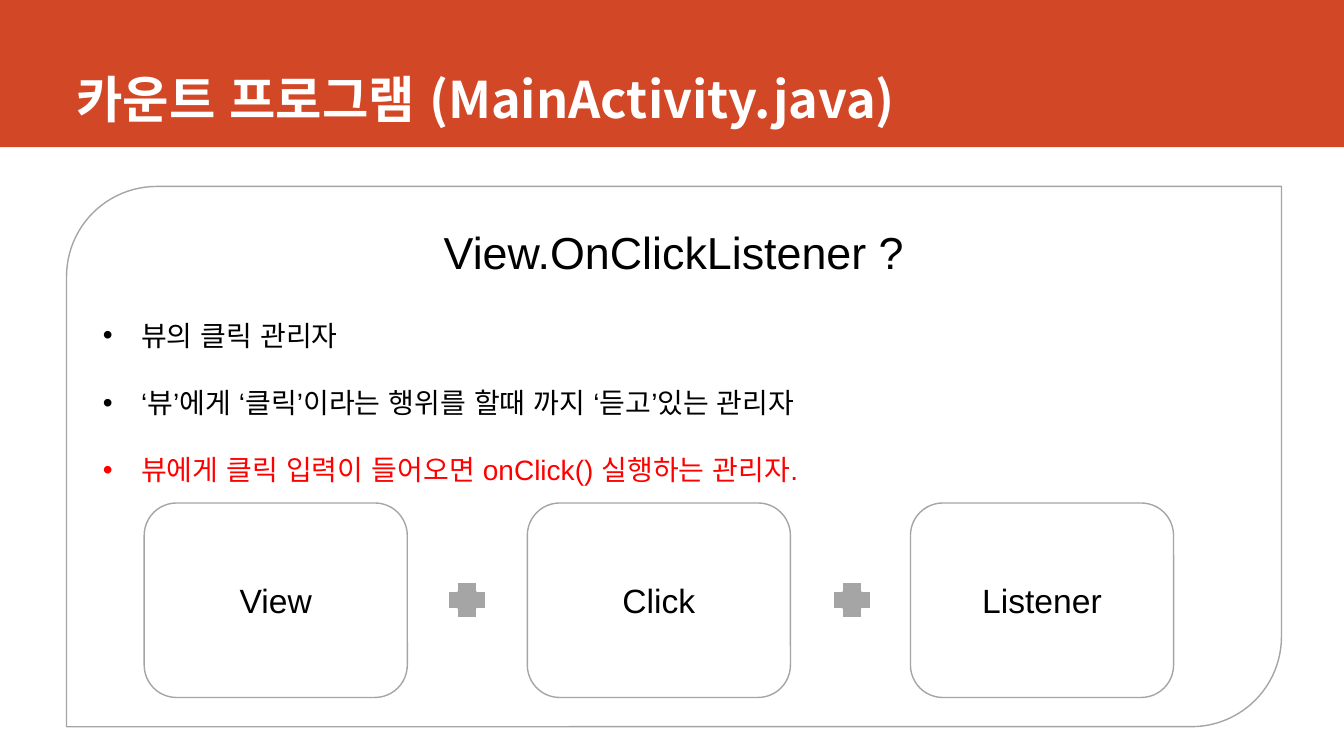
from pptx import Presentation
from pptx.dml.color import RGBColor
from pptx.enum import shapes, text
from pptx.oxml.ns import qn
from pptx.util import Inches, Pt
from lxml import etree

RED = RGBColor(0xD2, 0x47, 0x26)
GRAY = RGBColor(0xA5, 0xA5, 0xA5)
WHITE = RGBColor(0xFF, 0xFF, 0xFF)
BLACK = RGBColor(0, 0, 0)
ALERT = RGBColor(0xFF, 0, 0)
KIND = shapes.MSO_SHAPE
MID = text.PP_ALIGN.CENTER

deck = Presentation()
deck.slide_width, deck.slide_height = Inches(13.33), Inches(7.5)
slide = deck.slides.add_slide(deck.slide_layouts[6])


def draw(kind, left, top, width, height, fill, line=None, weight=1):
    shape = slide.shapes.add_shape(kind, Inches(left), Inches(top), Inches(width), Inches(height))
    shape.shadow.inherit = False
    shape.fill.solid()
    shape.fill.fore_color.rgb = fill
    if line is None:
        shape.line.fill.background()
    else:
        shape.line.color.rgb = line
        shape.line.width = Pt(weight)
    return shape


def write(para, words, size=24, color=BLACK, font="Arial", bold=False, align=MID):
    para.alignment = align
    run = para.add_run()
    run.text = words
    run.font.size = Pt(size)
    run.font.name = font
    run.font.bold = bold
    run.font.color.rgb = color
    etree.SubElement(run.font._element, qn("a:ea"), typeface="Arial")


draw(KIND.RECTANGLE, 0, 0, 13.33, 1.46, RED)
title = slide.shapes.add_textbox(Inches(0.66), 0, Inches(11.76), Inches(1.32)).text_frame
title.word_wrap = True
title.vertical_anchor = text.MSO_ANCHOR.BOTTOM
write(title.paragraphs[0], "카운트 프로그램 (MainActivity.java)", size=36, color=WHITE,
      font="Noto Sans CJK KR", bold=True, align=text.PP_ALIGN.LEFT)

panel = draw(KIND.ROUND_2_DIAG_RECTANGLE, 0.66, 1.85, 12.05, 5.36, WHITE, GRAY).text_frame
panel.vertical_anchor = text.MSO_ANCHOR.TOP
panel.margin_top = Inches(0.12)
write(panel.paragraphs[0], "View.OnClickListener ?", size=32)

points = [
    ("뷰의 클릭 관리자", BLACK, 4.5),
    ("‘뷰’에게 ‘클릭’이라는 행위를 할때 까지 ‘듣고’있는 관리자", BLACK, 0),
    ("뷰에게 클릭 입력이 들어오면 onClick() 실행하는 관리자.", ALERT, 0),
]
for words, color, gap in points:
    para = panel.add_paragraph()
    write(para, words, size=20, color=color, align=text.PP_ALIGN.LEFT)
    para.line_spacing = Pt(48)
    para.space_before = Pt(gap)
    props = para._p.get_or_add_pPr()
    props.set("marL", str(Inches(0.38)))
    props.set("indent", str(-Inches(0.38)))
    etree.SubElement(props, qn("a:buFont"), typeface="Arial")
    etree.SubElement(props, qn("a:buChar"), char="•")

for i, word in enumerate(["View", "Click", "Listener"]):
    box = draw(KIND.ROUNDED_RECTANGLE, 1.43 + 3.8 * i, 4.99, 2.61, 1.93, WHITE, GRAY).text_frame
    box.vertical_anchor = text.MSO_ANCHOR.MIDDLE
    write(box.paragraphs[0], word)

for i in range(2):
    draw(KIND.CROSS, 4.44 + 3.82 * i, 5.77, 0.38, 0.36, GRAY, WHITE, 1.5)

deck.save("out.pptx")
